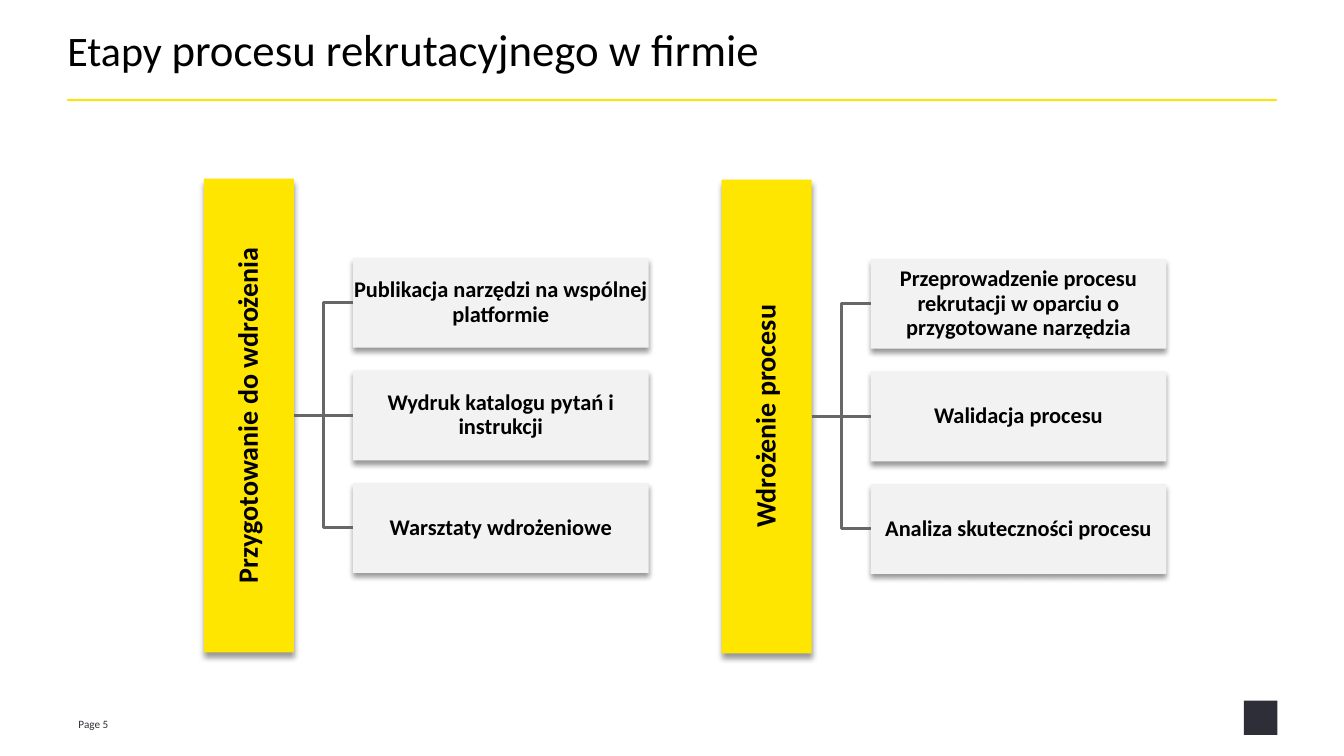
import pptx
import pptx.dml.color
import pptx.enum.shapes
import pptx.enum.text
import pptx.oxml
import pptx.oxml.ns
import pptx.util

Pt = pptx.util.Pt
RGBColor = pptx.dml.color.RGBColor
Shape = pptx.enum.shapes.MSO_SHAPE
Link = pptx.enum.shapes.MSO_CONNECTOR
Align = pptx.enum.text.PP_ALIGN
Anchor = pptx.enum.text.MSO_ANCHOR
Fit = pptx.enum.text.MSO_AUTO_SIZE

YELLOW = RGBColor(0xFF, 0xE6, 0x00)
PALE = RGBColor(0xF2, 0xF2, 0xF2)
GRAY = RGBColor(0x67, 0x67, 0x67)
DARK = RGBColor(0x2E, 0x2E, 0x38)
BLACK = RGBColor(0, 0, 0)
NS = pptx.oxml.ns.nsdecls("a")
SHADOW = (f'<a:effectLst {NS}><a:outerShdw blurRad="50800" dist="38100" dir="5400000" '
          'algn="t" rotWithShape="0"><a:srgbClr val="000000"><a:alpha val="40000"/>'
          '</a:srgbClr></a:outerShdw></a:effectLst>')

STAGES = [
    ("Przygotowanie do wdrożenia",
     ["Publikacja narzędzi na wspólnej platformie",
      "Wydruk katalogu pytań i instrukcji",
      "Warsztaty wdrożeniowe"]),
    ("Wdrożenie procesu",
     ["Przeprowadzenie procesu rekrutacji w oparciu o przygotowane narzędzia",
      "Walidacja procesu",
      "Analiza skuteczności procesu"]),
]
BAR_LEN, BAR_W = 338.4, 64.2
BOX_W, BOX_H, STEP, GAP = 211.2, 64.2, 80.4, 42.2

deck = pptx.Presentation()
deck.slide_width, deck.slide_height = Pt(960), Pt(540)
slide = deck.slides.add_slide(deck.slide_layouts[5])


def write(shape, runs, color, inset, align, anchor, space, bold):
    frame = shape.text_frame
    form = {"word_wrap": True, "auto_size": Fit.NONE, "vertical_anchor": anchor,
            "margin_left": Pt(inset), "margin_right": Pt(inset),
            "margin_top": Pt(inset), "margin_bottom": Pt(inset)}
    for key, value in form.items():
        setattr(frame, key, value)
    para = frame.paragraphs[0]
    para.alignment, para.line_spacing = align, space
    for text, size in runs:
        run = para.add_run()
        run.text = text
        for key, value in {"name": "Calibri", "size": Pt(size), "bold": bold}.items():
            setattr(run.font, key, value)
        run.font.color.rgb = color


def block(mid_x, mid_y, wide, high, fill, text, size):
    box = slide.shapes.add_shape(Shape.RECTANGLE, Pt(mid_x - wide / 2),
                                 Pt(mid_y - high / 2), Pt(wide), Pt(high))
    box.fill.solid()
    box.fill.fore_color.rgb = fill
    box.line.fill.background()
    box._element.spPr.append(pptx.oxml.parse_xml(SHADOW))
    write(box, [(text, size)], BLACK, 0.72, Align.CENTER, Anchor.MIDDLE, 0.9, True)
    return box


title = slide.shapes.title
for key, value in {"left": 48.2, "top": 21.6, "width": 864, "height": 67.7}.items():
    setattr(title, key, Pt(value))
write(title, [("Etapy ", 30), ("procesu rekrutacyjnego w firmie", 32)],
      BLACK, 0, Align.LEFT, Anchor.TOP, 0.85, False)

links = [(Link.STRAIGHT, 48.2, 71.4, 912.2, 71.4, YELLOW, 1.5)]
for col, (name, steps) in enumerate(STAGES):
    mid_x, mid_y = 177.8 + col * 369.8, 296.7 + col * 0.7
    edge = mid_x + BAR_W / 2
    bar = block(mid_x, mid_y, BAR_LEN, BAR_W, YELLOW, name, 20)
    bar.rotation = 270
    for row, step in enumerate(steps):
        y = mid_y + (row - 1) * STEP
        kind = Link.STRAIGHT if row == 1 else Link.ELBOW
        links.append((kind, edge, mid_y, edge + GAP, y, GRAY, 2))
        block(edge + GAP + BOX_W / 2, y, BOX_W, BOX_H, PALE, step, 16)

for kind, x1, y1, x2, y2, color, width in links:
    line = slide.shapes.add_connector(kind, Pt(x1), Pt(y1), Pt(x2), Pt(y2))
    line.line.color.rgb = color
    line.line.width = Pt(width)
    line._element.spPr.append(pptx.oxml.parse_xml(f"<a:effectLst {NS}/>"))

page = slide.shapes.add_textbox(Pt(49), Pt(509.8), Pt(52.6), Pt(14.4))
write(page, [("Page 5", 8)], DARK, 0, Align.LEFT, Anchor.MIDDLE, 1, False)
page.text_frame.margin_left = Pt(7.2)

mark = slide.shapes.add_shape(Shape.RECTANGLE, Pt(888.5), Pt(500.4), Pt(24), Pt(24.5))
mark.shadow.inherit = False
mark.fill.solid()
mark.fill.fore_color.rgb = DARK
mark.line.fill.background()

deck.save("out.pptx")
